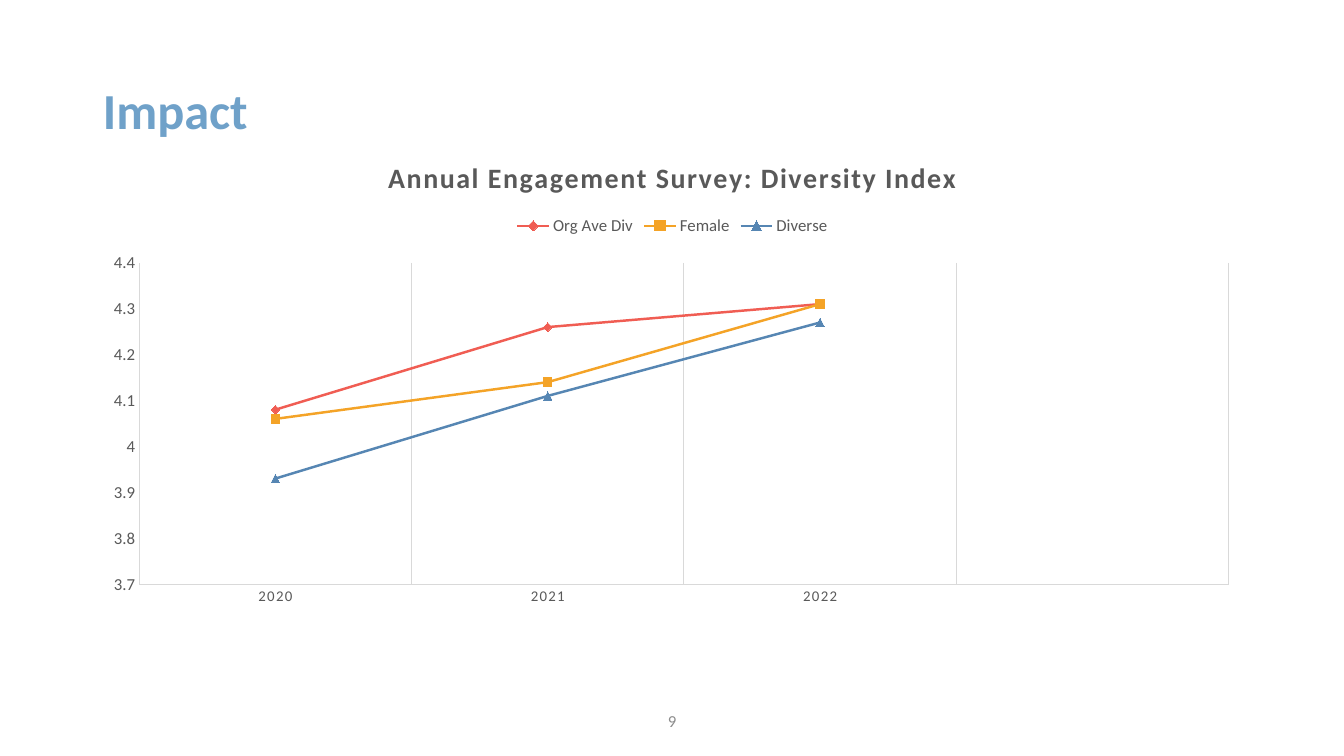
import pptx
import pptx.util
import pptx.chart.data
import pptx.dml.color
import pptx.enum.chart
import pptx.enum.text
import pptx.oxml

Cm, Pt = pptx.util.Cm, pptx.util.Pt
enum = pptx.enum.chart


def tint(code):
    return pptx.dml.color.RGBColor.from_string(code)


def style(item, code, **vals):
    for key, val in vals.items():
        setattr(item, key, val)
    if hasattr(item, "fill"):
        item.fill.solid()
        item.fill.fore_color.rgb = tint(code)
    else:
        item.color.rgb = tint(code)


deck = pptx.Presentation()
deck.slide_width, deck.slide_height = Cm(33.87), Cm(19.05)
slide = deck.slides.add_slide(deck.slide_layouts[5])

head = slide.shapes.title
box = {"left": Cm(2.34), "top": Cm(1.02), "width": Cm(29.21), "height": Cm(3.68)}
for key, val in box.items():
    setattr(head, key, val)
head.text_frame.text = "Impact"
head.text_frame.vertical_anchor = pptx.enum.text.MSO_ANCHOR.MIDDLE
para = head.text_frame.paragraphs[0]
para.alignment = pptx.enum.text.PP_ALIGN.LEFT
para.line_spacing = 0.9
style(para.runs[0].font, "6FA1C9", name="Calibri", size=Pt(36), bold=True)

rows = [
    ("Org Ave Div", (4.08, 4.26, 4.31, None), "F05D53", "DIAMOND"),
    ("Female", (4.06, 4.14, 4.31, None), "F4A327", "SQUARE"),
    ("Diverse", (3.93, 4.11, 4.27, None), "5686B3", "TRIANGLE"),
]
data = pptx.chart.data.CategoryChartData()
data.categories = ["2020", "2021", "2022", ""]
for name, vals, code, mark in rows:
    data.add_series(name, vals)
chart = slide.shapes.add_chart(
    enum.XL_CHART_TYPE.LINE_MARKERS, Cm(2.34), Cm(3.48), Cm(29.21), Cm(12.09), data
).chart
style(chart.font, "595959", name="Calibri", size=Pt(12))
chart.plots[0].vary_by_categories = False

for line, (name, vals, code, mark) in zip(chart.plots[0].series, rows):
    line.smooth = False
    style(line.format.line, code, width=Pt(1.75))
    line.marker.style = getattr(enum.XL_MARKER_STYLE, mark)
    line.marker.size = 6
    style(line.marker.format, code)
    style(line.marker.format.line, code, width=Pt(0.75))

chart.has_title = True
chart.chart_title.include_in_layout = False
label = chart.chart_title.text_frame
label.text = "Annual Engagement Survey: Diversity Index"
font = label.paragraphs[0].runs[0].font
style(font, "595959", name="Calibri", size=Pt(20), bold=True)
label.paragraphs[0].runs[0]._r.get_or_add_rPr().set("spc", "100")

chart.has_legend = True
key = chart.legend
key.position = enum.XL_LEGEND_POSITION.TOP
key.include_in_layout = False
style(key.font, "595959", name="Calibri", size=Pt(12))

years, scale = chart.category_axis, chart.value_axis
for axis, size in ((years, 10.6), (scale, 12)):
    axis.major_tick_mark = axis.minor_tick_mark = enum.XL_TICK_MARK.NONE
    axis.has_major_gridlines = axis is years
    style(axis.format.line, "D9D9D9", width=Pt(0.75))
    style(axis.tick_labels.font, "595959", name="Calibri", size=Pt(size))
style(years.major_gridlines.format.line, "D9D9D9", width=Pt(0.75))
years._element.txPr.p_lst[0].pPr.defRPr.set("spc", "100")
limits = {"minimum_scale": 3.7, "maximum_scale": 4.4, "major_unit": 0.1}
for name, val in limits.items():
    setattr(scale, name, val)
scale.tick_labels.number_format = "General"
scale.tick_labels.number_format_is_linked = False

area = chart._chartSpace.chart.plotArea
for old in area.xpath("c:layout"):
    area.remove(old)
parts = [("layoutTarget", "inner"), ("xMode", "edge"), ("yMode", "edge"),
         ("x", 0.04), ("y", 0.26), ("w", 0.94), ("h", 0.67)]
inner = "".join(f'<c:{tag} val="{val}"/>' for tag, val in parts)
space = "http://schemas.openxmlformats.org/drawingml/2006/chart"
area.insert(0, pptx.oxml.parse_xml(
    f'<c:layout xmlns:c="{space}"><c:manualLayout>{inner}</c:manualLayout></c:layout>'))

page = slide.shapes.add_textbox(Cm(13.13), Cm(17.65), Cm(7.62), Cm(1.02)).text_frame
page.word_wrap = True
page.vertical_anchor = pptx.enum.text.MSO_ANCHOR.MIDDLE
page.text = "9"
page.paragraphs[0].alignment = pptx.enum.text.PP_ALIGN.CENTER
style(page.paragraphs[0].runs[0].font, "8C8C8C", name="Calibri", size=Pt(12))

deck.save("out.pptx")
